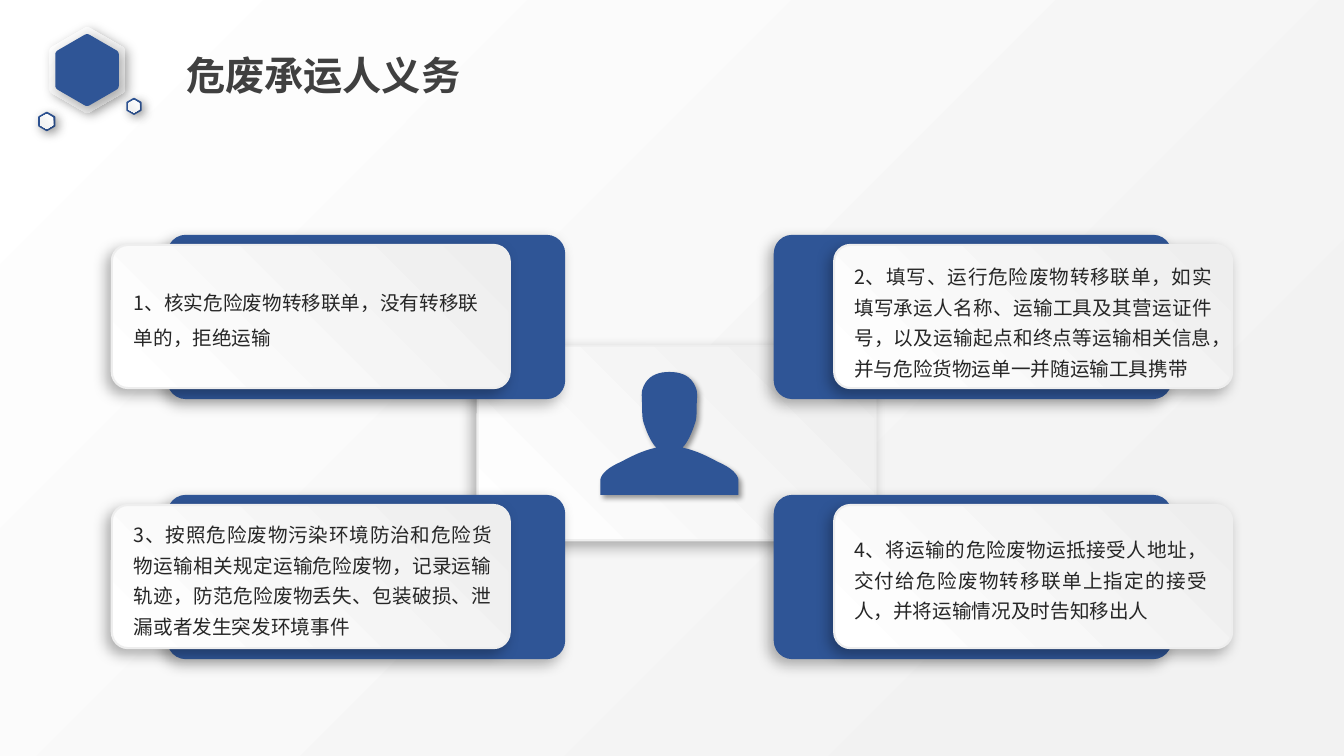
import copy
import math
from dataclasses import dataclass

import pptx
import pptx.dml.color
import pptx.enum.shapes
import pptx.enum.text
import pptx.oxml
import pptx.oxml.ns
import pptx.util

CELL = 91440
COLUMNS, ROWS = 133.4, 75
FONT = "Noto Sans CJK SC"
COLORS = {
    "blue": "2F5596", "white": "FFFFFF", "mist": "F2F2F2", "panel": "EEEEEE",
    "pearl": "ECECEC", "silver": "D9D9D9", "title": "404040", "text": "262626",
    "shadow": "000000",
}
CARD_WIDTH, BACK_HEIGHT, FRONT_HEIGHT, CORNER = 39.5, 16.3, 14.2, 0.113
CARD_TOPS = (23.3, 49.1)
BACK_LEFTS = (16.6, 76.8)
FRONT_LEFTS = (11.1, 82.8)
TEXT_LEFTS = (12.3, 83.8)


@dataclass(frozen=True)
class Gradient:
    stops: tuple[tuple[float, str], ...]
    angle: int


@dataclass(frozen=True)
class Shadow:
    opacity: int
    blur: float
    distance: float
    direction: int


@dataclass(frozen=True)
class Hexagon:
    center: tuple[float, float]
    width: float
    fill: str | Gradient


@dataclass(frozen=True)
class Duty:
    column: int
    row: int
    top: float
    width: float
    height: float
    text: str
    spacing: float = 1.3
    justified: bool = True


BACKGROUND = Gradient(((0, "white"), (0.88, "mist")), 45)
PANEL = Gradient(((0, "panel"), (1, "white")), 135)
RIM = Gradient(((0, "white"), (0.73, "pearl"), (1, "silver")), 45)
PALE = Gradient(((0, "white"), (0.77, "mist")), 140)
CARD_SHADOW = Shadow(30, 10, 5, 135)
HEXAGON_SHADOW = Shadow(28, 8, 3, 45)
PERSON_SHADOW = Shadow(40, 4, 3, 45)

HEXAGONS = (
    Hexagon((8.65, 6.95), 7.5, RIM),
    Hexagon((8.65, 6.95), 6.3, "blue"),
    Hexagon((4.65, 12.05), 1.7, "blue"),
    Hexagon((4.65, 12.05), 1.3, PALE),
    Hexagon((13.3, 10.55), 1.5, "blue"),
    Hexagon((13.3, 10.55), 1.1, PALE),
)
DUTIES = (
    Duty(0, 0, 27.2, 37, 7.7, "1、核实危险废物转移联单，没有转移联单的，拒绝运输", 1.5, False),
    Duty(1, 0, 25.1, 37.5, 13, "2、填写、运行危险废物转移联单，如实填写承运人名称、运输工具及其营运证件号，"
         "以及运输起点和终点等运输相关信息，并与危险货物运单一并随运输工具携带"),
    Duty(0, 1, 50.7, 37.5, 13, "3、按照危险废物污染环境防治和危险货物运输相关规定运输危险废物，"
         "记录运输轨迹，防范危险废物丢失、包装破损、泄漏或者发生突发环境事件"),
    Duty(1, 1, 52.2, 37, 9.9, "4、将运输的危险废物运抵接受人地址，交付给危险废物转移联单上指定的接受人，"
         "并将运输情况及时告知移出人"),
)
PERSON_ORIGIN = (66.45, 36.9)
PERSON_CURVES = (
    ((0, 0), (1.2, 0), (2.3, 0.4), (2.7, 1.8)),
    ((2.7, 1.8), (2.8, 2.3), (2.7, 3), (2.7, 3.5)),
    ((2.7, 3.5), (2.7, 4.2), (2.7, 4.7), (2.5, 5.2)),
    ((2.5, 5.2), (2.2, 6.1), (1.8, 7), (1.3, 7.5)),
    ((1.3, 7.5), (3.1, 7.9), (4.3, 8.7), (5.2, 9.1)),
    ((5.2, 9.1), (6.85, 9.9), (6.85, 10.7), (6.85, 10.7)),
)
PERSON_BASE = (6.85, 12.2)


def cells(count: float) -> pptx.util.Emu:
    return pptx.util.Emu(round(count * CELL))


def rgb(name: str) -> pptx.dml.color.RGBColor:
    return pptx.dml.color.RGBColor.from_string(COLORS[name])


def paint(fill, style: str | Gradient) -> None:
    if isinstance(style, str):
        fill.solid()
        fill.fore_color.rgb = rgb(style)
        return
    fill.gradient()
    fill.gradient_angle = 360 - style.angle
    first = fill.gradient_stops[0]._gs
    for _ in style.stops[2:]:
        first.addnext(copy.deepcopy(first))
    for stop, (position, color) in zip(fill.gradient_stops, style.stops):
        stop.position = position
        stop.color.rgb = rgb(color)


def cast_shadow(shape, shadow: Shadow) -> None:
    shape.shadow.inherit = False
    effects = shape._element.spPr.find(pptx.oxml.ns.qn("a:effectLst"))
    effects.append(pptx.oxml.parse_xml(
        f'<a:outerShdw {pptx.oxml.ns.nsdecls("a")} blurRad="{pptx.util.Pt(shadow.blur)}" '
        f'dist="{pptx.util.Pt(shadow.distance)}" dir="{shadow.direction * 60000}" '
        f'algn="ctr" rotWithShape="0"><a:srgbClr val="{COLORS["shadow"]}">'
        f'<a:alpha val="{shadow.opacity * 1000}"/></a:srgbClr></a:outerShdw>'))


def add_box(slide, left: float, top: float, height: float, style: str | Gradient) -> None:
    shape = slide.shapes.add_shape(
        pptx.enum.shapes.MSO_SHAPE.ROUNDED_RECTANGLE,
        cells(left), cells(top), cells(CARD_WIDTH), cells(height))
    shape.adjustments[0] = CORNER
    paint(shape.fill, style)
    if isinstance(style, Gradient):
        paint(shape.line.fill, "panel")
        shape.line.width = pptx.util.Pt(1.5)
    else:
        shape.line.fill.background()
    cast_shadow(shape, CARD_SHADOW)


def add_outline(slide, points: list, style: str | Gradient, shadow: Shadow) -> None:
    corners = [(cells(x), cells(y)) for x, y in points]
    builder = slide.shapes.build_freeform(*corners[0])
    builder.add_line_segments(corners[1:], close=True)
    shape = builder.convert_to_shape()
    paint(shape.fill, style)
    shape.line.fill.background()
    cast_shadow(shape, shadow)


def bezier(points: tuple, steps: int = 10) -> list:
    degree = len(points) - 1
    weights = [[math.comb(degree, k) * (i / steps) ** k * (1 - i / steps) ** (degree - k)
                for k in range(degree + 1)] for i in range(steps + 1)]
    return [tuple(sum(w * point[axis] for w, point in zip(row, points)) for axis in (0, 1))
            for row in weights]


def hexagon_points(hexagon: Hexagon, cut: float = 0.08) -> list:
    radius = hexagon.width / math.sqrt(3)
    corners = [(hexagon.center[0] + radius * math.sin(math.radians(60 * i)),
                hexagon.center[1] - radius * math.cos(math.radians(60 * i))) for i in range(6)]
    points = []
    for i, corner in enumerate(corners):
        before, after = (
            tuple(c + cut * (n - c) for c, n in zip(corner, neighbour))
            for neighbour in (corners[i - 1], corners[(i + 1) % 6]))
        points += bezier((before, corner, after), 4)
    return points


def person_points() -> list:
    half = [point for curve in PERSON_CURVES for point in bezier(curve)] + [PERSON_BASE]
    mirrored = [(-x, y) for x, y in reversed(half)]
    return [(PERSON_ORIGIN[0] + x, PERSON_ORIGIN[1] + y) for x, y in half + mirrored]


def write_text(shape, text: str, *, size: float, color: str, bold: bool = False,
               spacing: float = 1, justified: bool = False, wrap: bool = True) -> None:
    frame = shape.text_frame
    frame.word_wrap = wrap
    frame.auto_size = pptx.enum.text.MSO_AUTO_SIZE.SHAPE_TO_FIT_TEXT
    frame.vertical_anchor = pptx.enum.text.MSO_ANCHOR.TOP
    paragraph = frame.paragraphs[0]
    alignments = pptx.enum.text.PP_ALIGN
    paragraph.alignment = alignments.JUSTIFY if justified else alignments.LEFT
    paragraph.line_spacing = spacing
    run = paragraph.add_run()
    run.text = text
    run.font.size = pptx.util.Pt(size)
    run.font.bold = bold
    run.font.name = FONT
    run.font.color.rgb = rgb(color)
    properties = run.font._element
    properties.set("lang", "zh-CN")
    properties.find(pptx.oxml.ns.qn("a:latin")).addnext(pptx.oxml.parse_xml(
        f'<a:ea {pptx.oxml.ns.nsdecls("a")} typeface="{FONT}"/>'))


def main() -> None:
    presentation = pptx.Presentation()
    presentation.slide_width, presentation.slide_height = cells(COLUMNS), cells(ROWS)
    slide = presentation.slides.add_slide(presentation.slide_layouts[5])
    paint(slide.background.fill, BACKGROUND)
    for hexagon in HEXAGONS:
        add_outline(slide, hexagon_points(hexagon), hexagon.fill, HEXAGON_SHADOW)
    title = slide.shapes.title
    title.left, title.top, title.width, title.height = map(cells, (17.5, 4.6, 31.8, 5.7))
    write_text(title, "危废承运人义务", size=28, color="title", bold=True, wrap=False)
    add_box(slide, 47.4, 34.3, 19.3, PANEL)
    for duty in DUTIES:
        top = CARD_TOPS[duty.row]
        add_box(slide, BACK_LEFTS[duty.column], top, BACK_HEIGHT, "blue")
        add_box(slide, FRONT_LEFTS[duty.column], top + 1, FRONT_HEIGHT, PANEL)
        text_box = slide.shapes.add_textbox(*map(
            cells, (TEXT_LEFTS[duty.column], duty.top, duty.width, duty.height)))
        write_text(text_box, duty.text, size=14, color="text",
                   spacing=duty.spacing, justified=duty.justified)
    add_outline(slide, person_points(), "blue", PERSON_SHADOW)
    presentation.save("out.pptx")


if __name__ == "__main__":
    main()
